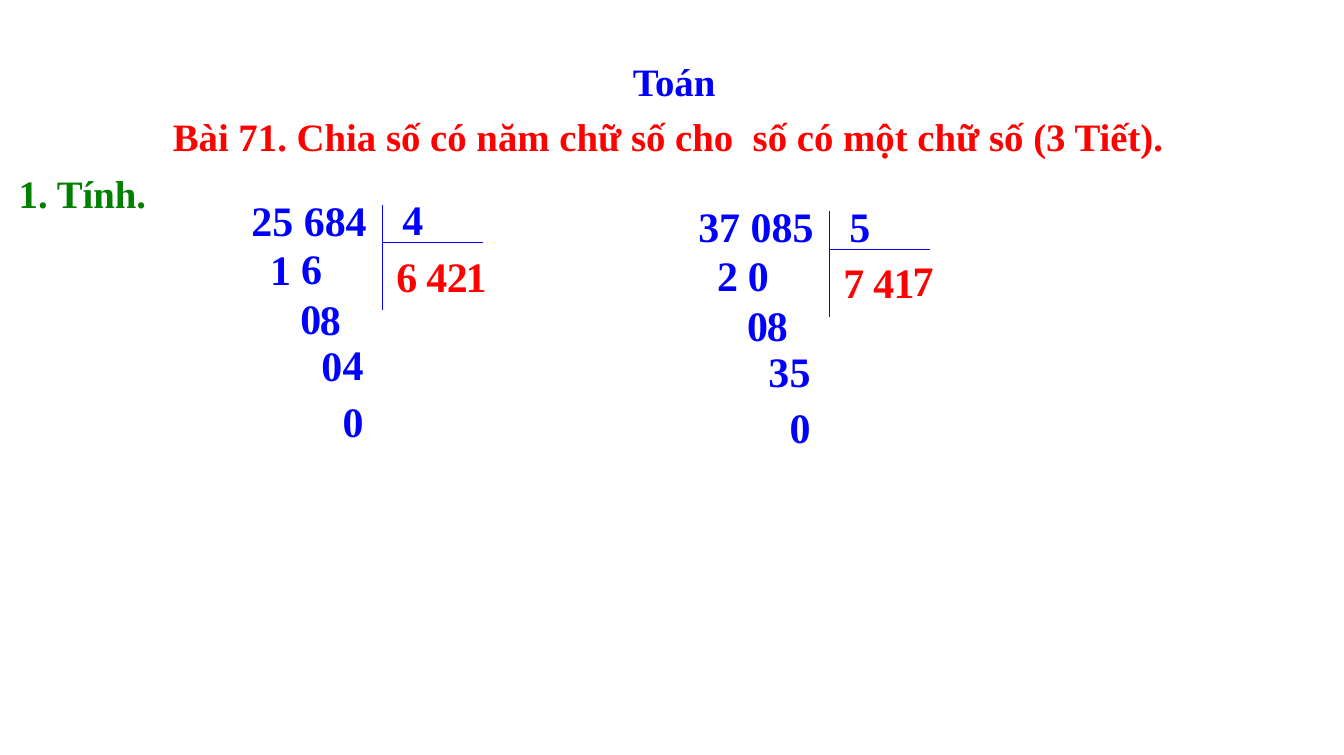
from lxml.etree import SubElement
from pptx import Presentation
from pptx.dml.color import RGBColor
from pptx.enum.shapes import MSO_CONNECTOR
from pptx.enum.text import MSO_AUTO_SIZE, PP_ALIGN
from pptx.oxml.ns import qn
from pptx.util import Pt

BLUE, RED, GREEN = "0000FF", "FF0000", "008000"

deck = Presentation()
deck.slide_width, deck.slide_height = Pt(1281.6), Pt(720)
slide = deck.slides.add_slide(deck.slide_layouts[6])


def write(text, x, y, wide, color, size=40, high=55.4, align=PP_ALIGN.LEFT):
    box = slide.shapes.add_textbox(Pt(x), Pt(y), Pt(wide), Pt(high))
    frame = box.text_frame
    frame.word_wrap = True
    frame.auto_size = MSO_AUTO_SIZE.SHAPE_TO_FIT_TEXT
    frame.text = text
    para = frame.paragraphs[0]
    para.alignment = align
    font = para.runs[0].font
    font.name, font.size, font.bold = "Times New Roman", Pt(size), True
    font.color.rgb = RGBColor.from_string(color)


def rule(x1, y1, x2, y2):
    line = slide.shapes.add_connector(
        MSO_CONNECTOR.STRAIGHT, Pt(x1), Pt(y1), Pt(x2), Pt(y2))
    line.line.color.rgb = RGBColor.from_string(BLUE)
    line.line.width = Pt(0.75)
    SubElement(line._element.spPr, qn("a:effectLst"))


# Place of each digit within a long division: x, y, width, colour
spots = [(371, 235, 36, RED), (419, 235, 36, RED), (437, 235, 19.4, RED),
         (250.6, 228.4, 24, BLUE), (280, 228.2, 30, BLUE),
         (299.5, 320.4, 42, BLUE), (298, 276.5, 36, BLUE),
         (279.4, 275.6, 42, BLUE), (319.7, 319.7, 42, BLUE),
         (319.7, 373.3, 42, BLUE), (399.6, 235, 25, RED)]

# Left shift, top shift, lift of the last quotient digit,
# dividend, divisor, digits in the order of the spots
sums = [(0, 0, 0, "25 684", "4", "62116080404"),
        (426.1, 6.1, 1.4, "37 085", "5", "71720380504")]

for dx, dy, lift, whole, part, digits in sums:
    write(whole, 232.7 + dx, 182 + dy, 132, BLUE)
    write(part, 376.7 + dx, 181.4 + dy, 66, BLUE)
    rule(365 + dx, 195.6 + dy, 365 + dx, 295.8 + dy)
    rule(365 + dx, 231.6 + dy, 461 + dx, 231.6 + dy)
    for i, (digit, (x, y, wide, color)) in enumerate(zip(digits, spots)):
        rise = lift if i == 2 else 0
        write(digit, x + dx, y + dy - rise, wide, color)

# Headings
write("1. Tính.", 10.8, 158.4, 186, GREEN, 37, 52)
write("Toán", 3.6, 51.4, 1278.4, BLUE, 37, 53, PP_ALIGN.CENTER)
write("Bài 71. Chia số có năm chữ số cho  số có một chữ số (3 Tiết).",
      -2.7, 103.7, 1279.4, RED, 37, 52, PP_ALIGN.CENTER)

deck.save("out.pptx")
